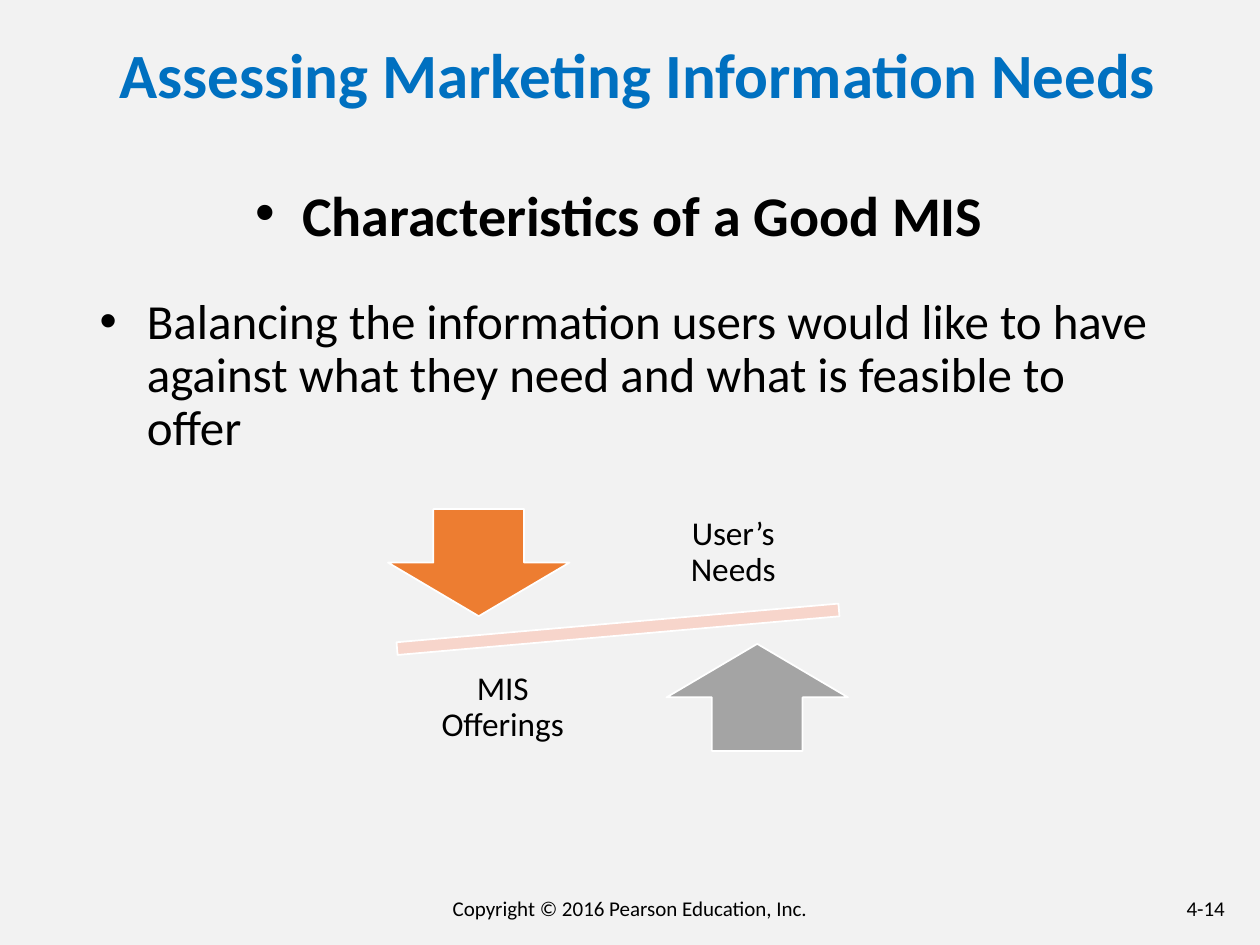
"""Build the slide on assessing marketing information needs."""
from pptx import Presentation
from pptx.dml.color import RGBColor
from pptx.enum.shapes import MSO_SHAPE as Shape
from pptx.enum.text import MSO_ANCHOR as Anchor, MSO_AUTO_SIZE as AutoSize, PP_ALIGN as Align
from pptx.oxml import parse_xml
from pptx.oxml.ns import nsdecls
from pptx.util import Inches, Pt

BACKGROUND = RGBColor(0xF2, 0xF2, 0xF2)
BLUE = RGBColor(0x00, 0x70, 0xC0)
BLACK = RGBColor(0, 0, 0)
WHITE = RGBColor(0xFF, 0xFF, 0xFF)
PINK = RGBColor(0xF7, 0xD5, 0xCB)
ORANGE = RGBColor(0xED, 0x7D, 0x31)
GRAY = RGBColor(0xA4, 0xA4, 0xA4)


def write(box, place, text, size, align, anchor, spacing=1.0, color=BLACK, bold=False, inset=None):
    box.left, box.top, box.width, box.height = [Inches(n) for n in place]
    frame = box.text_frame
    frame.word_wrap = True
    frame.auto_size = AutoSize.NONE
    frame.vertical_anchor = anchor
    if inset is not None:
        frame.margin_left = frame.margin_right = Inches(inset)
        frame.margin_top = frame.margin_bottom = Inches(inset)
    frame.text = text
    paragraph = frame.paragraphs[0]
    paragraph.alignment = align
    paragraph.line_spacing = spacing
    paragraph.space_before = Pt(0)
    font = paragraph.font
    font.name, font.size, font.bold = "Calibri", Pt(size), bold
    font.color.rgb = color


def set_bullet(box, *elements):
    properties = box.text_frame.paragraphs[0]._p.get_or_add_pPr()
    properties.set("marL", str(Inches(0.25)))
    properties.set("indent", str(Inches(-0.25)))
    for element in elements:
        properties.append(parse_xml(element.replace("/>", f" {nsdecls('a')}/>")))


prs = Presentation()
prs.slide_width, prs.slide_height = Inches(10), Inches(7.5)
slide = prs.slides.add_slide(prs.slide_layouts[3])
slide.background.fill.solid()
slide.background.fill.fore_color.rgb = BACKGROUND
title, subtitle, points = slide.placeholders

write(title, (0.81, 0.06, 8.5, 0.86), "Assessing Marketing Information Needs",
      36, Align.CENTER, Anchor.BOTTOM, 0.75, BLUE, True)

set_bullet(subtitle, "<a:buNone/>")
write(subtitle, (1, 1.51, 7.83, 0.49), "Characteristics of a Good MIS",
      32, Align.CENTER, Anchor.BOTTOM, 0.66, bold=True)

set_bullet(points, '<a:buFont typeface="Arial"/>', '<a:buChar char="•"/>')
write(points, (0.69, 2.31, 8.62, 4.34),
      "Balancing the information users would like to have against what they need "
      "and what is feasible to offer",
      28, Align.LEFT, Anchor.TOP, 0.9)

balance_parts = [
    (Shape.MATH_MINUS, (2.51, 4.78, 4.79, 0.43), PINK, 355, [0.235]),
    (Shape.DOWN_ARROW, (3.08, 4.04, 1.44, 0.85), ORANGE, 0, [0.5, 0.5]),
    (Shape.UP_ARROW, (5.29, 5.11, 1.44, 0.85), GRAY, 0, [0.5, 0.5]),
]
for preset, place, color, angle, adjustments in balance_parts:
    part = slide.shapes.add_shape(preset, *[Inches(n) for n in place])
    part.rotation = angle
    for index, value in enumerate(adjustments):
        part.adjustments[index] = value
    part.shadow.inherit = False
    part.fill.solid()
    part.fill.fore_color.rgb = color
    part.line.color.rgb = WHITE
    part.line.width = Pt(1)

for text, left, top in [("User’s Needs", 5.05, 3.94), ("MIS Offerings", 3.22, 5.17)]:
    label = slide.shapes.add_textbox(0, 0, 0, 0)
    write(label, (left, top, 1.54, 0.89), text, 19, Align.CENTER, Anchor.MIDDLE, 0.9, inset=0.15)

for text, left, width, align in [
    ("Copyright © 2016 Pearson Education, Inc.", 3.31, 3.38, Align.CENTER),
    ("4-14", 9.01, 0.81, Align.RIGHT),
]:
    footer = slide.shapes.add_textbox(0, 0, 0, 0)
    write(footer, (left, 7, width, 0.36), text, 12, align, Anchor.BOTTOM)

prs.save("out.pptx")
